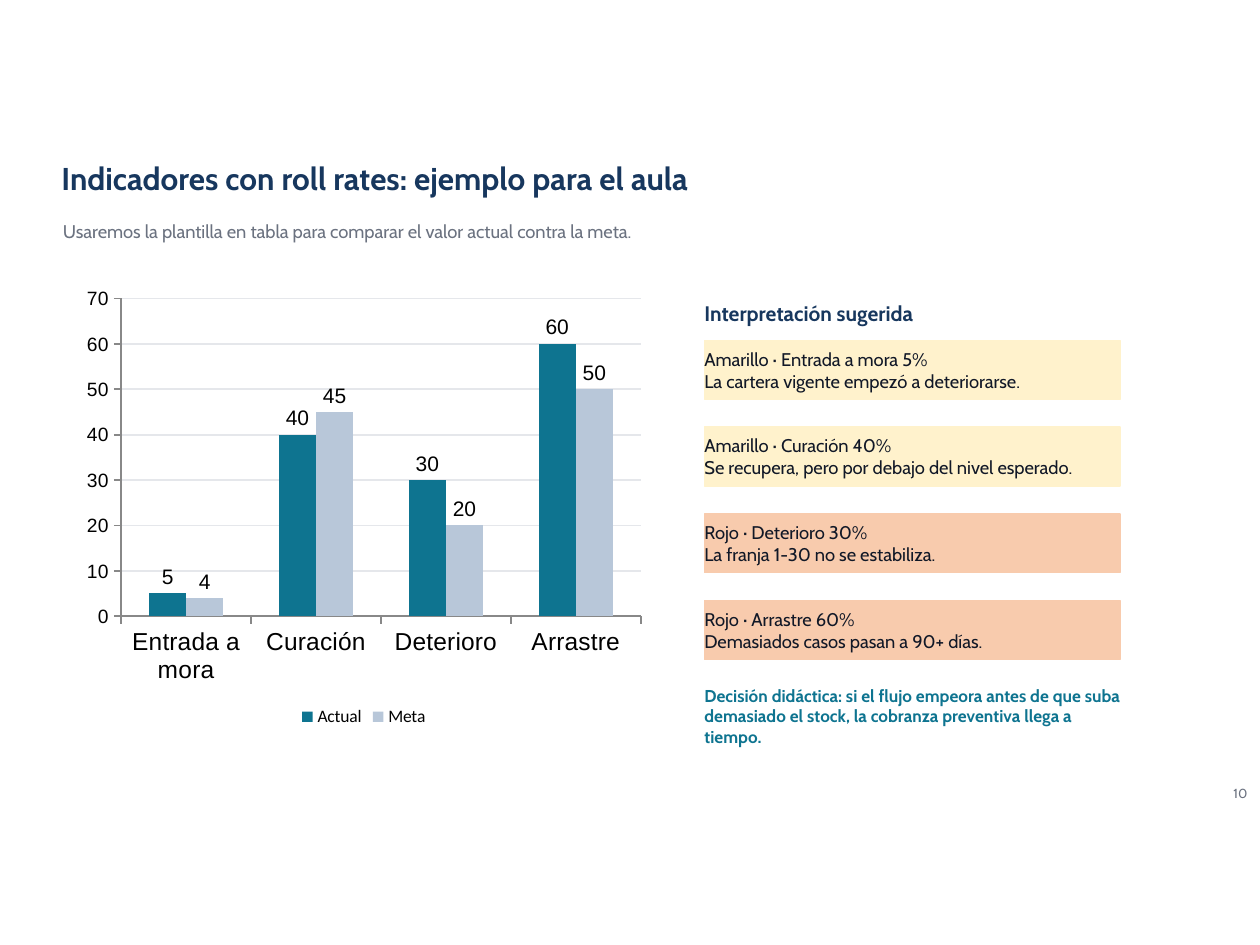
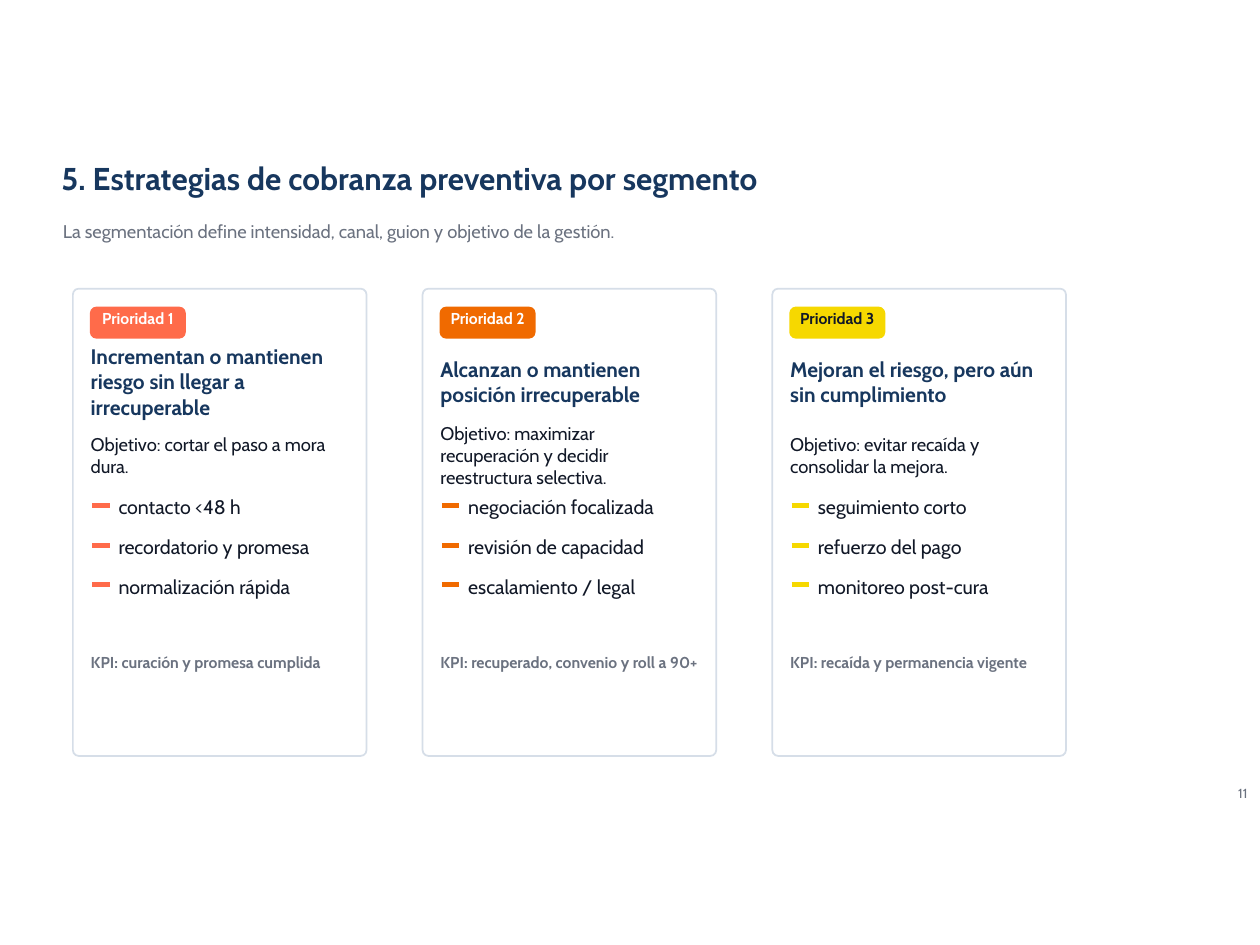
from dataclasses import dataclass, field
from typing import Any

from lxml import etree
from pptx import Presentation
from pptx.chart.data import CategoryChartData
from pptx.dml.color import RGBColor
from pptx.enum.chart import XL_CHART_TYPE, XL_LABEL_POSITION, XL_LEGEND_POSITION
from pptx.enum.chart import XL_TICK_LABEL_POSITION, XL_TICK_MARK
from pptx.enum.shapes import MSO_CONNECTOR, MSO_SHAPE
from pptx.enum.text import MSO_ANCHOR, PP_ALIGN
from pptx.oxml.ns import qn
from pptx.util import Cm, Pt

COLUMNS = XL_CHART_TYPE.COLUMN_CLUSTERED
OUTSIDE = XL_LABEL_POSITION.OUTSIDE_END
BOTTOM = XL_LEGEND_POSITION.BOTTOM
LOW = XL_TICK_LABEL_POSITION.LOW
TICK = XL_TICK_MARK.OUTSIDE
NONE = XL_TICK_MARK.NONE
RECT = MSO_SHAPE.RECTANGLE
ROUND = MSO_SHAPE.ROUNDED_RECTANGLE
STRAIGHT = MSO_CONNECTOR.STRAIGHT
MIDDLE = MSO_ANCHOR.MIDDLE
LEFT, CENTER, RIGHT = PP_ALIGN.LEFT, PP_ALIGN.CENTER, PP_ALIGN.RIGHT


@dataclass(frozen=True)
class Theme:
    font: str = "Cabin"
    plot: str = "Arial"
    key: str = "Calibri"
    navy: str = "17375E"
    gray: str = "6B7280"
    ink: str = "111827"
    black: str = "000000"
    white: str = "FFFFFF"
    teal: str = "0E7490"
    mist: str = "B8C7D9"
    grid: str = "E5E7EB"
    axis: str = "888888"
    edge: str = "D6DEE8"
    cream: str = "FFF2CC"
    peach: str = "F8CBAD"
    coral: str = "FF6B4A"
    orange: str = "F06A00"
    yellow: str = "F6D800"
    title: float = 18
    head: float = 12
    item: float = 11.2
    body: float = 10.5
    note: float = 9.8
    small: float = 9
    page: float = 7.5


THEME = Theme()


def apply(target, **values):
    for name, value in values.items():
        setattr(target, name, value)


def ink(font, size, color, name=THEME.font, bold=False):
    apply(font, size=Pt(size), name=name, bold=bold)
    font.color.rgb = RGBColor.from_string(color)


def paint(fill, color):
    fill.solid()
    fill.fore_color.rgb = RGBColor.from_string(color)


def stroke(line, color, width):
    paint(line.fill, color)
    line.width = Pt(width)


@dataclass
class Deck:
    show: Any = field(default_factory=Presentation)
    slide: Any = None

    def size(self, width, height):
        apply(self.show, slide_width=Cm(width), slide_height=Cm(height))

    def page(self, title, intro, number):
        self.slide = self.show.slides.add_slide(self.show.slide_layouts[6])
        self.text((1.24, 3.1, 17.53, 0.97), title, THEME.title, THEME.navy, bold=True)
        self.text((1.27, 4.44, 17.53, 0.46), intro, THEME.body, THEME.gray)
        self.text((24.36, 15.77, 1.04, 0.46), str(number), THEME.page, THEME.gray,
                  align=RIGHT, pad=(0.25, 0.13))

    def label(self, frame, words, size, color, bold=False, align=LEFT, pad=(0, 0)):
        side, edge = map(Cm, pad)
        apply(frame, word_wrap=True, vertical_anchor=MIDDLE, margin_left=side,
              margin_right=side, margin_top=edge, margin_bottom=edge, text=words)
        for para in frame.paragraphs:
            para.alignment = align
            for run in para.runs:
                ink(run.font, size, color, bold=bold)

    def text(self, place, words, size, color, **style):
        box = self.slide.shapes.add_textbox(*map(Cm, place))
        self.label(box.text_frame, words, size, color, **style)

    def shape(self, kind, place, fill, edge, width=1, curve=None):
        shape = self.slide.shapes.add_shape(kind, *map(Cm, place))
        shape.shadow.inherit = False
        paint(shape.fill, fill)
        stroke(shape.line, edge, width)
        if curve is not None:
            shape.adjustments[0] = curve
        return shape

    def dash(self, left, top, width, color):
        ends = map(Cm, (left, top, left + width, top))
        line = self.slide.shapes.add_connector(STRAIGHT, *ends)
        stroke(line.line, color, 3)
        etree.SubElement(line._element.spPr, qn("a:effectLst"))

    def chart(self, place, names, series):
        data = CategoryChartData(number_format="General")
        data.categories = names
        for name, values, _ in series:
            data.add_series(name, values)
        chart = self.slide.shapes.add_chart(COLUMNS, *map(Cm, place), data).chart
        apply(chart, has_title=False, has_legend=True)
        ink(chart.font, 10, THEME.black, THEME.key)
        apply(chart.legend, position=BOTTOM, include_in_layout=False)
        for axis, size in ((chart.category_axis, 14), (chart.value_axis, 11)):
            apply(axis, major_tick_mark=TICK, minor_tick_mark=NONE)
            stroke(axis.format.line, THEME.axis, 1)
            ink(axis.tick_labels.font, size, THEME.black, THEME.plot)
        chart.category_axis.tick_label_position = LOW
        scale = chart.value_axis
        apply(scale, minimum_scale=0, maximum_scale=70, major_unit=10,
              has_major_gridlines=True)
        stroke(scale.major_gridlines.format.line, THEME.grid, 1)
        plot = chart.plots[0]
        apply(plot, gap_width=150, overlap=0, vary_by_categories=False)
        for bars, (_, _, color) in zip(plot.series, series):
            paint(bars.format.fill, color)
            labels = bars.data_labels
            apply(labels, show_value=True, number_format="#,##0",
                  number_format_is_linked=False, position=OUTSIDE)
            ink(labels.font, 12, THEME.black, THEME.plot)

    def alert(self, place, fill, words):
        box = self.shape(RECT, place, fill, fill, 0.75)
        self.label(box.text_frame, words, THEME.body, THEME.ink)

    def card(self, left, badge, color, tone, head, goal, tasks, metric):
        self.shape(ROUND, (left, 5.82, 5.92, 9.42), THEME.white, THEME.edge, curve=0.02)
        inner = left + 0.36
        self.shape(ROUND, (inner, 6.2, 1.9, 0.61), color, color, curve=0.19)
        self.text((inner, 6.3, 1.9, 0.25), badge, THEME.small, tone,
                  bold=True, align=CENTER)
        self.text((inner, 7.04, 5.13, 1.3), head, THEME.head, THEME.navy, bold=True)
        self.text((inner, 8.59, 5.13, 1.19), goal, THEME.body, THEME.ink)
        for row, task in enumerate(tasks):
            top = 10.03 + 0.8 * row
            self.dash(inner + 0.03, top + 0.16, 0.35, color)
            self.text((inner + 0.56, top, 4.39, 0.38), task, THEME.item, THEME.ink)
        self.text((inner, 13, 5.18, 0.71), metric, THEME.small, THEME.gray, bold=True)


def rates(deck):
    deck.page("Indicadores con roll rates: ejemplo para el aula",
              "Usaremos la plantilla en tabla para comparar el valor actual contra la meta.", 10)
    deck.chart((1.52, 5.61, 11.63, 9.14),
               ("Entrada a mora", "Curación", "Deterioro", "Arrastre"),
               (("Actual", (5, 40, 30, 60), THEME.teal),
                ("Meta", (4, 45, 20, 50), THEME.mist)))
    left = 14.2
    deck.text((left, 6.1, 4.39, 0.43), "Interpretación sugerida",
              THEME.head, THEME.navy, bold=True)
    alerts = (
        (THEME.cream, "Amarillo · Entrada a mora 5%\nLa cartera vigente empezó a deteriorarse."),
        (THEME.cream, "Amarillo · Curación 40%\nSe recupera, pero por debajo del nivel esperado."),
        (THEME.peach, "Rojo · Deterioro 30%\nLa franja 1-30 no se estabiliza."),
        (THEME.peach, "Rojo · Arrastre 60%\nDemasiados casos pasan a 90+ días."),
    )
    for row, (fill, words) in enumerate(alerts):
        deck.alert((left, 6.86 + 1.75 * row, 8.38, 1.19), fill, words)
    deck.text((left, 14.1, 8.48, 0.66),
              "Decisión didáctica: si el flujo empeora antes de que suba demasiado "
              "el stock, la cobranza preventiva llega a tiempo.",
              THEME.note, THEME.teal, bold=True)


def plans(deck):
    deck.page("5. Estrategias de cobranza preventiva por segmento",
              "La segmentación define intensidad, canal, guion y objetivo de la gestión.", 11)
    cards = (
        ("Prioridad 1", THEME.coral, THEME.white,
         "Incrementan o mantienen riesgo sin llegar a irrecuperable",
         "Objetivo: cortar el paso a mora dura.",
         ("contacto <48 h", "recordatorio y promesa", "normalización rápida"),
         "KPI: curación y promesa cumplida"),
        ("Prioridad 2", THEME.orange, THEME.white,
         "Alcanzan o mantienen posición irrecuperable",
         "Objetivo: maximizar recuperación y decidir reestructura selectiva.",
         ("negociación focalizada", "revisión de capacidad", "escalamiento / legal"),
         "KPI: recuperado, convenio y roll a 90+"),
        ("Prioridad 3", THEME.yellow, THEME.ink,
         "Mejoran el riesgo, pero aún sin cumplimiento",
         "Objetivo: evitar recaída y consolidar la mejora.",
         ("seguimiento corto", "refuerzo del pago", "monitoreo post-cura"),
         "KPI: recaída y permanencia vigente"),
    )
    for col, parts in enumerate(cards):
        deck.card(1.47 + 7.05 * col, *parts)


def main():
    deck = Deck()
    deck.size(25.4, 19.05)
    rates(deck)
    plans(deck)
    deck.show.save("out.pptx")


if __name__ == "__main__":
    main()
